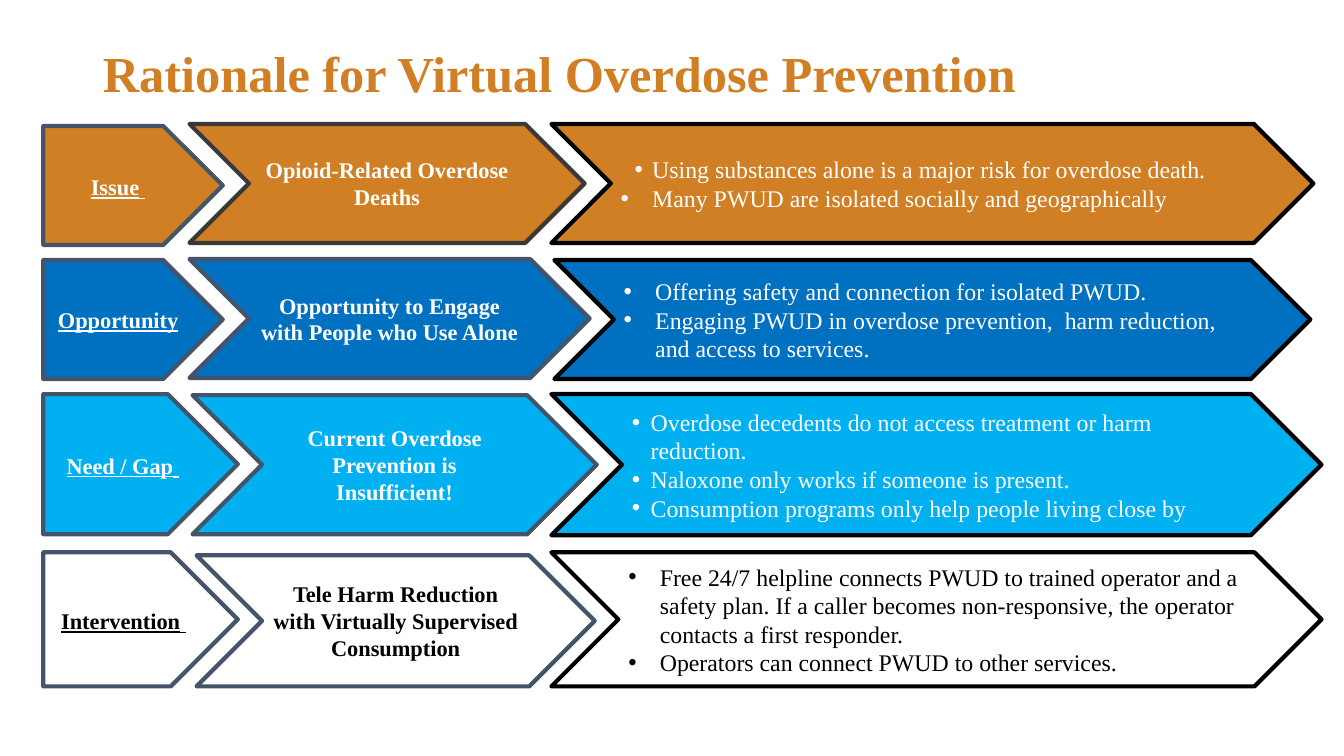
from lxml.etree import SubElement
from pptx import Presentation
from pptx.dml.color import RGBColor
from pptx.enum.shapes import MSO_SHAPE
from pptx.enum.text import MSO_ANCHOR, PP_ALIGN
from pptx.oxml.ns import qn
from pptx.util import Pt

ORANGE = RGBColor(0xD1, 0x7F, 0x25)
BLUE = RGBColor(0x00, 0x70, 0xC0)
SKY = RGBColor(0x00, 0xB0, 0xF0)
WHITE = RGBColor(0xFF, 0xFF, 0xFF)
BLACK = RGBColor(0x00, 0x00, 0x00)
SLATE = RGBColor(0x44, 0x54, 0x6A)
CHARCOAL = RGBColor(0x3B, 0x38, 0x38)

LABEL_LEFT = 30.96

# Each box is (left, top, width, height); the label box always starts at LABEL_LEFT.
ROWS = [
    {
        "fill": ORANGE, "text": WHITE, "topic_line": CHARCOAL,
        "label": ("Issue", " "), "label_box": (90, 128.16, 84.96),
        "topic": "Opioid-Related Overdose Deaths",
        "topic_box": (135.36, 88.56, 282.24, 84.96),
        "points_box": (393.84, 88.56, 544.32, 84.96),
        "indent": 22.5,
        "points": [
            ("Using substances alone is a major risk for overdose death.", 12.5),
            ("Many PWUD are isolated socially and geographically", 22.5),
        ],
    },
    {
        "fill": BLUE, "text": WHITE, "topic_line": SLATE,
        "label": ("Opportunity",), "label_box": (185.76, 128.16, 84.96),
        "topic": "Opportunity to Engage with People who Use Alone",
        "topic_box": (135.36, 185.04, 285.84, 84.96),
        "points_box": (396, 185.76, 540, 84.96),
        "indent": 22.5,
        "points": [
            ("Offering safety and connection for isolated PWUD.", 22.5),
            ("Engaging PWUD in overdose prevention,  harm reduction, "
             "and access to services.", 22.5),
        ],
    },
    {
        "fill": SKY, "text": WHITE, "topic_line": SLATE,
        "label": ("Need / Gap", " "), "label_box": (281.52, 138.96, 100.08),
        "topic": "Current Overdose Prevention is Insufficient!",
        "topic_box": (137.52, 282.24, 288.72, 99.36),
        "points_box": (393.84, 281.52, 550.08, 100.8),
        "indent": 13.5,
        "points": [
            ("Overdose decedents do not access treatment or harm reduction.", 13.5),
            ("Naloxone only works if someone is present.", 13.5),
            ("Consumption programs only help people living close by", 13.5),
        ],
    },
    {
        "fill": WHITE, "text": BLACK, "topic_line": SLATE,
        "label": ("Intervention", " "), "label_box": (394.56, 138.96, 95.76),
        "topic": "Tele Harm Reduction with Virtually Supervised Consumption",
        "topic_box": (140.4, 396.72, 284.4, 93.6),
        "points_box": (393.84, 394.56, 550.08, 95.76),
        "indent": 22.5,
        "points": [
            ("Free 24/7 helpline connects PWUD to trained operator and a safety plan. "
             "If a caller becomes non-responsive, the operator contacts a first "
             "responder.", 22.5),
            ("Operators can connect PWUD to other services.", 22.5),
        ],
    },
]


class ArrowSlide:
    """A title-only slide with rows of arrow shapes."""

    font_name = "Times New Roman"
    line_width = Pt(3)

    def __init__(self, prs):
        self.s = prs.slides.add_slide(prs.slide_layouts[5])

    def place(self, sp, box):
        for name, value in zip(("left", "top", "width", "height"), box):
            setattr(sp, name, Pt(value))

    def run(self, p, text, color, **formats):
        r = p.add_run()
        r.text = text
        r.font.color.rgb = color
        for name, value in {"name": self.font_name, **formats}.items():
            setattr(r.font, name, value)

    def title(self, text, box):
        sp = self.s.shapes.title
        self.place(sp, box)
        tf = sp.text_frame
        tf.word_wrap = True
        tf.vertical_anchor = MSO_ANCHOR.MIDDLE
        p = tf.paragraphs[0]
        p.alignment = PP_ALIGN.LEFT
        p.line_spacing = 0.9
        self.run(p, text, ORANGE, size=Pt(36), bold=True)

    def arrow(self, kind, box, fill, line):
        sp = self.s.shapes.add_shape(kind, *map(Pt, box))
        sp.shadow.inherit = False
        sp.fill.solid()
        sp.fill.fore_color.rgb = fill
        sp.line.color.rgb = line
        sp.line.width = self.line_width
        tf = sp.text_frame
        tf.word_wrap = True
        tf.vertical_anchor = MSO_ANCHOR.MIDDLE
        return tf

    def label(self, parts, box, fill, color):
        p = self.arrow(MSO_SHAPE.PENTAGON, box, fill, SLATE).paragraphs[0]
        p.alignment = PP_ALIGN.CENTER
        for text, size in zip(parts, (16, 18)):
            self.run(p, text, color, size=Pt(size), bold=True, underline=True)

    def topic(self, text, box, fill, line, color):
        p = self.arrow(MSO_SHAPE.CHEVRON, box, fill, line).paragraphs[0]
        p.alignment = PP_ALIGN.CENTER
        self.run(p, text, color, size=Pt(16), bold=True)

    def points(self, items, indent, box, fill, color):
        tf = self.arrow(MSO_SHAPE.CHEVRON, box, fill, BLACK)
        for i, (text, hanging) in enumerate(items):
            p = tf.add_paragraph() if i else tf.paragraphs[0]
            p.alignment = PP_ALIGN.LEFT
            self.bullet(p, indent, hanging)
            self.run(p, text, color, size=Pt(17))

    def bullet(self, p, indent, hanging):
        pPr = p._p.get_or_add_pPr()
        pPr.set("marL", str(Pt(indent)))
        pPr.set("indent", str(-Pt(hanging)))
        SubElement(pPr, qn("a:buFont")).set("typeface", "Arial")
        SubElement(pPr, qn("a:buChar")).set("char", "•")


def main():
    prs = Presentation()
    prs.slide_width, prs.slide_height = Pt(960), Pt(540)
    slide = ArrowSlide(prs)
    slide.title("Rationale for Virtual Overdose Prevention", (66.24, 28.8, 828, 51.12))
    for row in ROWS:
        fill, color = row["fill"], row["text"]
        slide.topic(row["topic"], row["topic_box"], fill, row["topic_line"], color)
        slide.label(row["label"], (LABEL_LEFT, *row["label_box"]), fill, color)
        slide.points(row["points"], row["indent"], row["points_box"], fill, color)
    prs.save("out.pptx")


if __name__ == "__main__":
    main()
